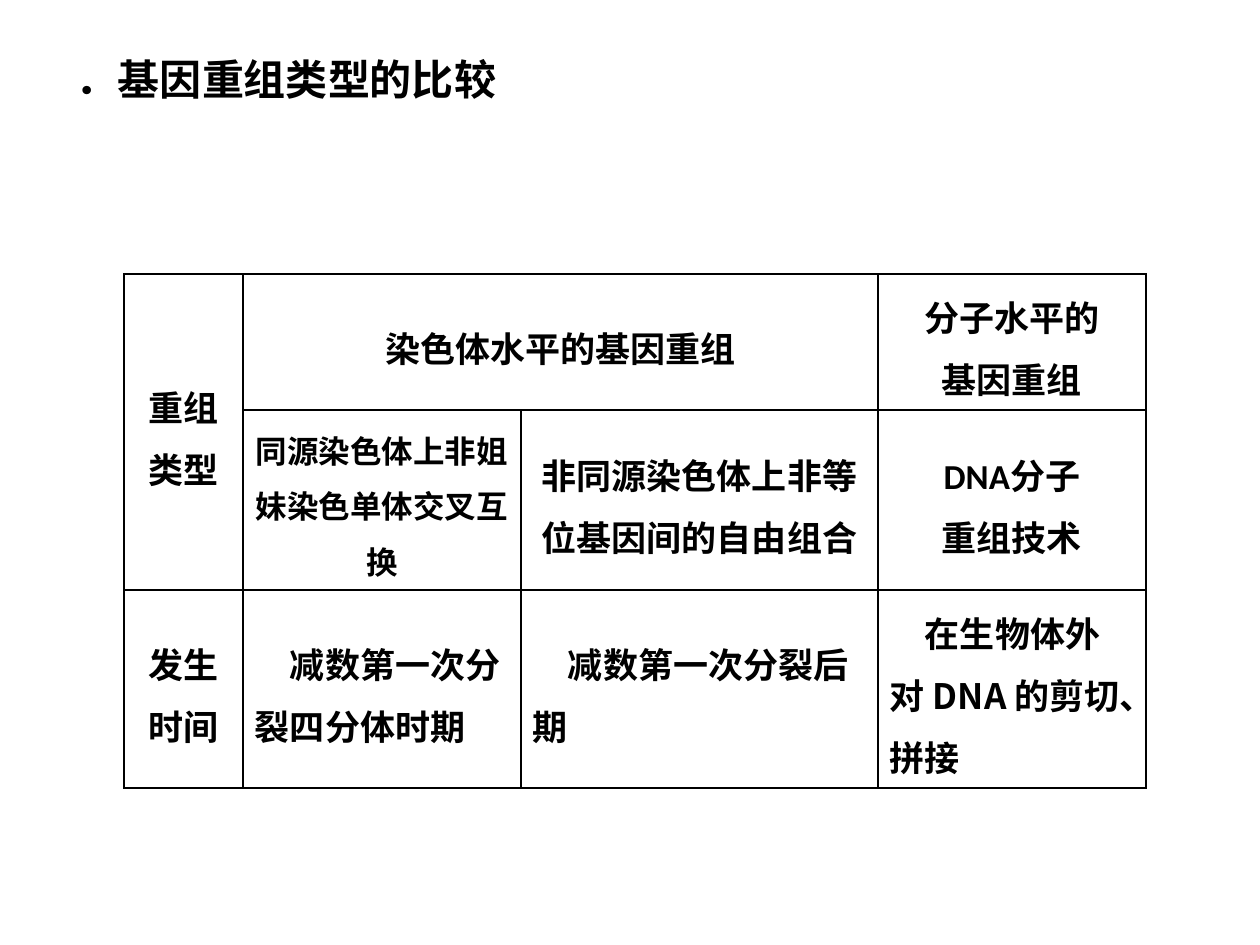
from lxml.etree import SubElement
from pptx import Presentation
from pptx.dml.color import RGBColor
from pptx.enum.text import MSO_ANCHOR, PP_ALIGN
from pptx.oxml.ns import qn
from pptx.util import Pt

PX = 914400 // 126
HAN = "Noto Sans CJK SC"
BLACK = "000000"
MARGINS = {"margin_left": 12, "margin_right": 12,
           "margin_top": 6, "margin_bottom": 6}


def color(code):
    return RGBColor.from_string(code)


def write(holder, frame, lines, size, latin=HAN, align=PP_ALIGN.LEFT):
    for name, value in MARGINS.items():
        setattr(holder, name, value * PX)
    frame.word_wrap = True
    for index, line in enumerate(lines):
        para = frame.paragraphs[0] if index == 0 else frame.add_paragraph()
        para.alignment = align
        para.line_spacing = 1.22
        span = para.add_run()
        span.text = line
        for name, value in {"size": Pt(size), "bold": True, "name": latin}.items():
            setattr(span.font, name, value)
        span.font.color.rgb = color(BLACK)
        SubElement(span.font._element, qn("a:ea"), typeface=HAN)


deck = Presentation()
deck.slide_width, deck.slide_height = 1260 * PX, 945 * PX
page = deck.slides.add_slide(deck.slide_layouts[6])

# Heading
box = page.shapes.add_textbox(64 * PX, 36 * PX, 1091 * PX, 743 * PX)
write(box.text_frame, box.text_frame, ["．基因重组类型的比较"], 24)

# Comparison table
widths = [119, 278, 357, 268]
heights = [136, 180, 198]
table = page.shapes.add_table(len(heights), len(widths), 124 * PX, 274 * PX,
                              sum(widths) * PX, sum(heights) * PX).table
table.first_row = table.horz_banding = False
for column, width in zip(table.columns, widths):
    column.width = width * PX
for row, height in zip(table.rows, heights):
    row.height = height * PX

# Plain cells with a thin black grid
for cell in table.iter_cells():
    cell.vertical_anchor = MSO_ANCHOR.MIDDLE
    properties = cell._tc.get_or_add_tcPr()
    for side in ("lnL", "lnR", "lnT", "lnB"):
        edge = SubElement(properties, qn(f"a:{side}"), w=str(Pt(1)))
        SubElement(SubElement(edge, qn("a:solidFill")), qn("a:srgbClr"), val=BLACK)
    cell.fill.background()

table.cell(0, 0).merge(table.cell(1, 0))
table.cell(0, 1).merge(table.cell(0, 2))

# Cell text: row, column, lines, size, Latin font, alignment
CENTER, LEFT = PP_ALIGN.CENTER, PP_ALIGN.LEFT
entries = [
    (0, 0, ["重组", "类型"], 20, HAN, CENTER),
    (0, 1, ["染色体水平的基因重组"], 20, "Calibri", CENTER),
    (0, 3, ["分子水平的", "基因重组"], 20, "Calibri", CENTER),
    (1, 1, ["同源染色体上非姐妹染色单体交叉互换"], 18, "Calibri", CENTER),
    (1, 2, ["非同源染色体上非等位基因间的自由组合"], 20, "Calibri", CENTER),
    (1, 3, ["DNA分子", "重组技术"], 20, "Calibri", CENTER),
    (2, 0, ["发生", "时间"], 20, HAN, CENTER),
    (2, 1, ["　减数第一次分裂四分体时期"], 20, HAN, LEFT),
    (2, 2, ["　减数第一次分裂后期"], 20, HAN, LEFT),
    (2, 3, ["　在生物体外对 DNA 的剪切、拼接"], 20, HAN, LEFT),
]
for row, column, lines, size, latin, align in entries:
    cell = table.cell(row, column)
    write(cell, cell.text_frame, lines, size, latin, align)

deck.save("out.pptx")
